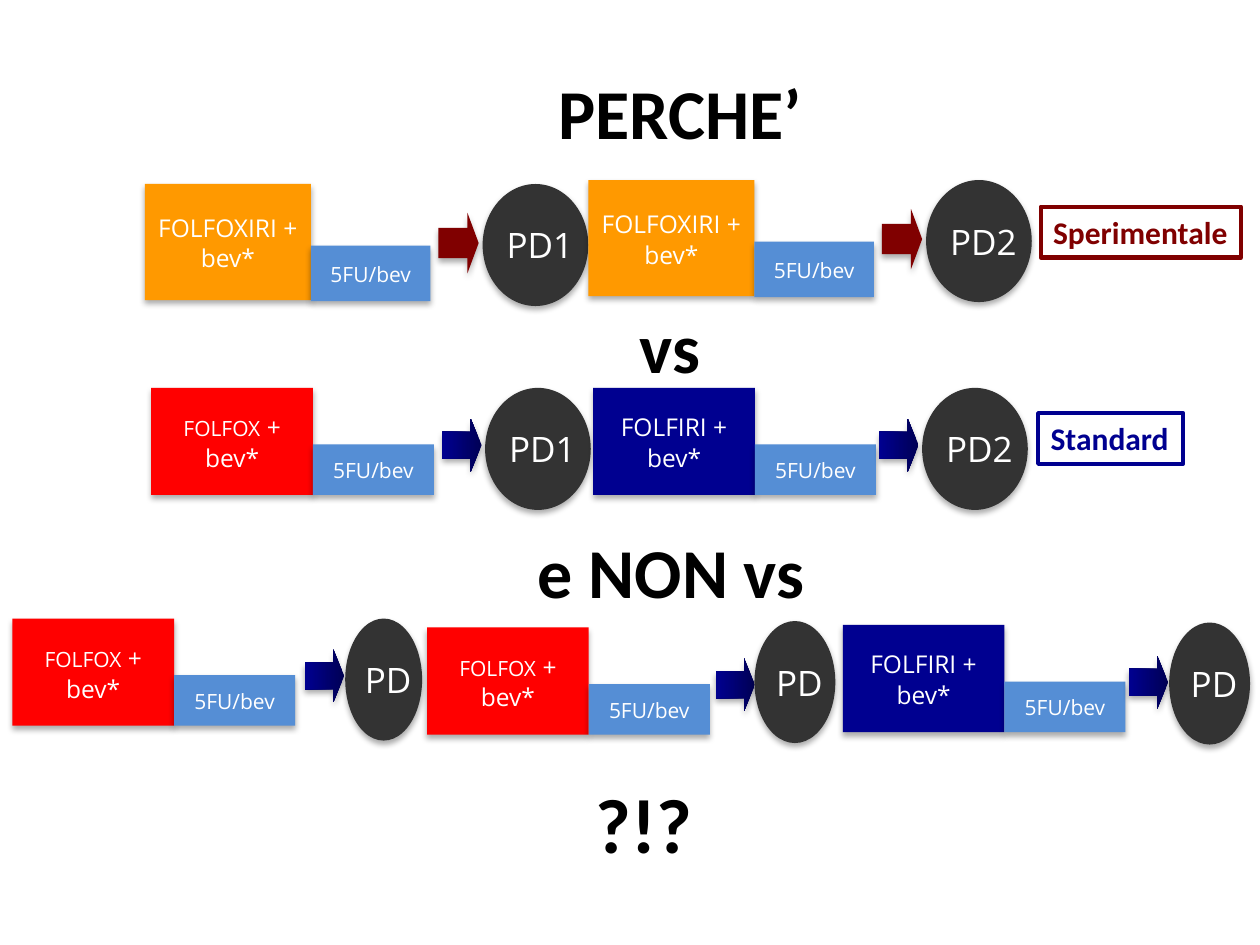
from lxml.etree import SubElement
from pptx import Presentation
from pptx.dml.color import RGBColor
from pptx.enum.shapes import MSO_SHAPE
from pptx.enum.text import MSO_ANCHOR, MSO_AUTO_SIZE, PP_ALIGN
from pptx.oxml.ns import qn
from pptx.util import Cm, Pt

BLACK = RGBColor(0x00, 0x00, 0x00)
WHITE = RGBColor(0xFF, 0xFF, 0xFF)
GREY = RGBColor(0x33, 0x33, 0x33)
RED = RGBColor(0xFF, 0x00, 0x00)
ORANGE = RGBColor(0xFF, 0x99, 0x00)
MAROON = RGBColor(0x80, 0x00, 0x00)
NAVY = RGBColor(0x00, 0x00, 0x90)
NIGHT = RGBColor(0x00, 0x00, 0x55)
BLUE = RGBColor(0x55, 0x8E, 0xD5)

TRIPLE = [("FOLFOXIRI + bev*", 14)]
FOLFOX = [("FOLFOX", 12), (" + bev*", 14)]
FOLFIRI = [("FOLFIRI + bev*", 14)]

TRIAL = [
    (2.92, 3.71, 8.84, "PD1", 9.73),
    (11.86, 3.63, 17.78, "PD2", 18.67),
]
CONTROL = [
    (FOLFOX, RED, 3.05, 7.82, 8.92, "PD1", 9.78, 7.82, 2.13),
    (FOLFIRI, NAVY, 11.96, 7.82, 17.73, "PD2", 18.59, 7.82, 2.13),
    (FOLFOX, RED, 0.25, 12.47, 6.15, "PD", 6.96, 12.47, 1.55),
    (FOLFOX, RED, 8.61, 12.65, 14.43, "PD", 15.21, 12.52, 1.63),
    (FOLFIRI, NAVY, 16.99, 12.6, 22.76, "PD", 23.57, 12.55, 1.63),
]
TITLES = [
    ("PERCHE’", 11, 1.27, 5.46, 1.96, 40),
    ("vs", 12.65, 5.99, 1.75, 1.96, 40),
    ("e NON vs", 10.59, 10.52, 6.27, 1.96, 40),
    ("?!?", 11.76, 15.52, 2.84, 2.13, 44),
]
TAGS = [
    ("Sperimentale", 20.98, 4.17, 4.04, MAROON),
    ("Standard", 20.93, 8.33, 2.92, NAVY),
]


def write(shape, text, size=12, font="Open Sans", color=WHITE, bold=False,
          align=PP_ALIGN.CENTER, anchor=MSO_ANCHOR.MIDDLE, wrap=True,
          grow=False, space=1.0):
    """Put text, or a list of (text, size) runs, in a shape."""
    frame = shape.text_frame
    frame.word_wrap = wrap
    frame.vertical_anchor = anchor
    if grow:
        frame.auto_size = MSO_AUTO_SIZE.SHAPE_TO_FIT_TEXT
    line = frame.paragraphs[0]
    line.alignment = align
    line.line_spacing = space
    for part, pts in [(text, size)] if isinstance(text, str) else text:
        run = line.add_run()
        run.text = part
        run.font.name = font
        run.font.size = Pt(pts)
        run.font.bold = bold
        run.font.color.rgb = color


class Board:
    """Holds the slide and draws the parts of a treatment scheme."""

    label = dict(font="Calibri", bold=True, align=PP_ALIGN.LEFT,
                 anchor=MSO_ANCHOR.TOP, wrap=False, grow=True)

    def __init__(self, slide):
        self.slide = slide

    def shape(self, kind, x, y, w, h, fill):
        """Add a filled shape with a soft shadow."""
        item = self.slide.shapes.add_shape(kind, Cm(x), Cm(y), Cm(w), Cm(h))
        item.fill.solid()
        item.fill.fore_color.rgb = fill
        item.line.fill.background()
        item.shadow.inherit = False
        glow = SubElement(item._element.spPr.find(qn("a:effectLst")),
                          qn("a:outerShdw"), blurRad=str(Pt(3.5)),
                          dist=str(Pt(2.2)), dir="5400000", rotWithShape="0")
        tone = SubElement(glow, qn("a:srgbClr"), val="000000")
        SubElement(tone, qn("a:alpha"), val="32000")
        return item

    def box(self, text, x, y, w, h, fill):
        """Add a drug box."""
        item = self.shape(MSO_SHAPE.RECTANGLE, x, y, w, h, fill)
        write(item, text, space=1.05)

    def arrow(self, x, y, w, h, fill):
        """Add an arrow, shaded when it is navy."""
        item = self.shape(MSO_SHAPE.RIGHT_ARROW, x, y, w, h, fill)
        item.adjustments[1] = 0.278
        if fill == NAVY:
            item.fill.gradient()
            item.fill.gradient_angle = 180
            for stop, color in zip(item.fill.gradient_stops, (NIGHT, NAVY)):
                stop.color.rgb = color

    def oval(self, text, x, y, w):
        """Add a progression oval."""
        item = self.shape(MSO_SHAPE.OVAL, x, y, w, 2.46, GREY)
        write(item, " " + text, size=20, wrap=False)

    def tag(self, text, x, y, w, color):
        """Add an outlined name for an arm."""
        item = self.slide.shapes.add_shape(
            MSO_SHAPE.RECTANGLE, Cm(x), Cm(y), Cm(w), Cm(1.02))
        item.fill.background()
        item.line.color.rgb = color
        item.line.width = Pt(2.5)
        item.shadow.inherit = False
        write(item, text, size=18, color=color, **self.label)

    def title(self, text, x, y, w, h, size):
        """Add a large heading."""
        item = self.slide.shapes.add_textbox(Cm(x), Cm(y), Cm(w), Cm(h))
        write(item, text, size=size, color=BLACK, **self.label)


def main():
    """Build the slide and save it."""
    deck = Presentation()
    deck.slide_width, deck.slide_height = Cm(25.4), Cm(19.05)
    board = Board(deck.slides.add_slide(deck.slide_layouts[6]))
    for x, y, tip, name, end in TRIAL:
        board.box(TRIPLE, x, y, 3.35, 2.34, ORANGE)
        board.box("5FU/bev", x + 3.35, y + 1.24, 2.41, 1.12, BLUE)
        board.arrow(tip, y + 0.58, 0.81, 1.22, MAROON)
        board.oval(name, end, y, 2.13)
    for drug, fill, x, y, tip, name, end, top, wide in CONTROL:
        board.box(drug, x, y, 3.26, 2.16, fill)
        board.box("5FU/bev", x + 3.26, y + 1.14, 2.44, 1.02, BLUE)
        board.arrow(tip, y + 0.62, 0.79, 1.07, NAVY)
        board.oval(name, end, top, wide)
    for row in TAGS:
        board.tag(*row)
    for row in TITLES:
        board.title(*row)
    deck.save("out.pptx")


if __name__ == "__main__":
    main()
